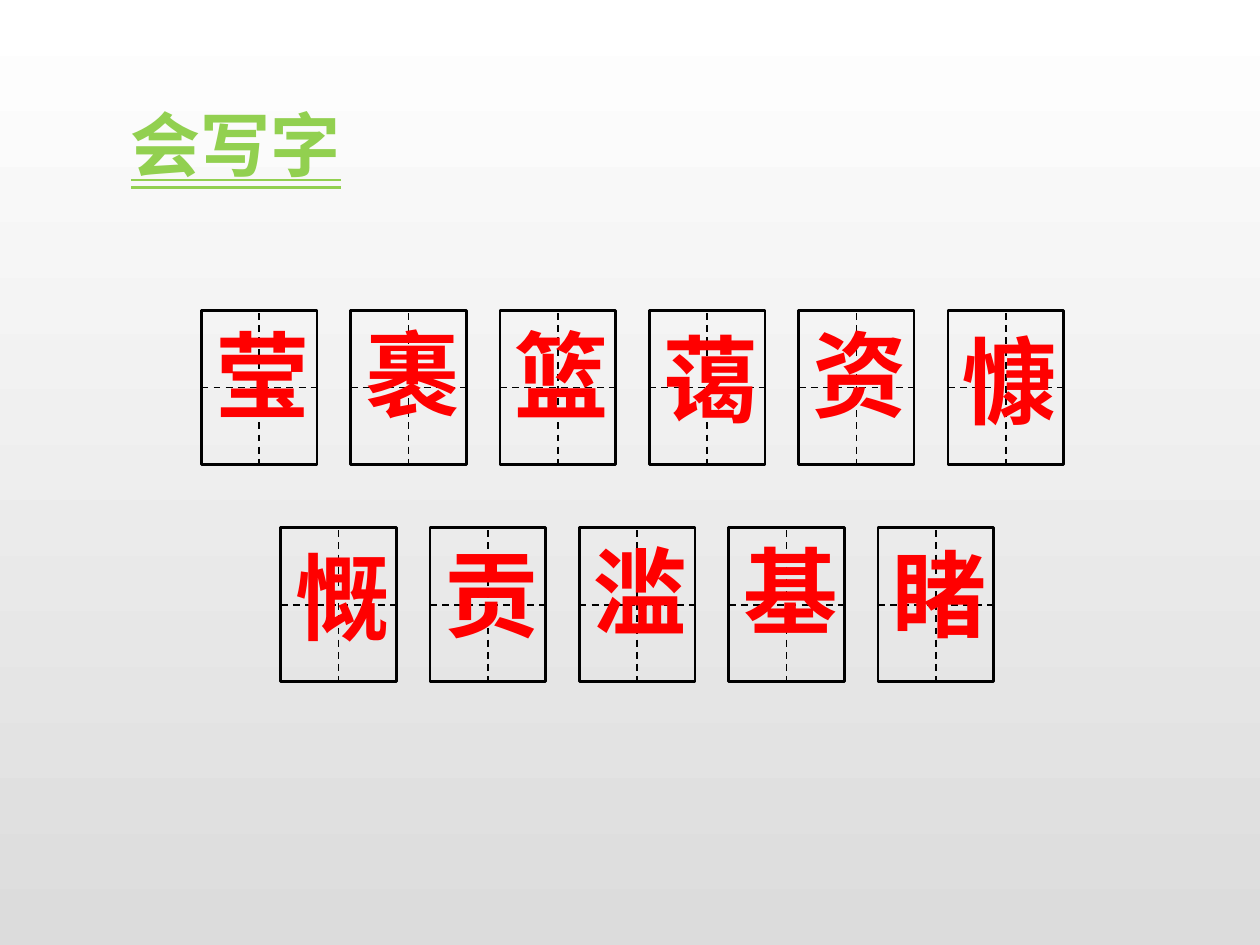
import pptx
import pptx.dml.color
import pptx.enum.dml
import pptx.enum.shapes
import pptx.enum.text
import pptx.oxml.ns
import pptx.util
from lxml import etree

Cm = pptx.util.Cm
Pt = pptx.util.Pt
RGB = pptx.dml.color.RGBColor.from_string
qn = pptx.oxml.ns.qn

COLORS = {
    "sky": "FFFFFF",
    "ground": "DCDCDC",
    "title": "92D050",
    "character": "FF0000",
    "grid": "000000",
}
FONT = "Noto Sans CJK SC"

deck = pptx.Presentation()
deck.slide_width, deck.slide_height = Cm(25.4), Cm(19.05)
slide = deck.slides.add_slide(deck.slide_layouts[6])

backdrop = slide.background.fill
backdrop.gradient()
backdrop.gradient_angle = 270
for stop, color in zip(backdrop.gradient_stops, ("sky", "ground")):
    stop.color.rgb = RGB(COLORS[color])


def add_text(text, left, top, width, height, size, color, wrap=True, underline=None):
    frame = slide.shapes.add_textbox(Cm(left), Cm(top), Cm(width), Cm(height)).text_frame
    frame.word_wrap = wrap
    frame.auto_size = pptx.enum.text.MSO_AUTO_SIZE.SHAPE_TO_FIT_TEXT
    run = frame.paragraphs[0].add_run()
    run.text = text
    run.font.size = Pt(size)
    run.font.bold = True
    run.font.underline = underline
    run.font.color.rgb = RGB(COLORS[color])
    run.font.name = FONT
    east_asian = etree.SubElement(run.font._element, qn("a:ea"))
    east_asian.set("typeface", FONT)


def add_guide(cell, x1, y1, x2, y2):
    guide = cell.shapes.add_connector(
        pptx.enum.shapes.MSO_CONNECTOR.STRAIGHT, Cm(x1), Cm(y1), Cm(x2), Cm(y2))
    guide.line.color.rgb = RGB(COLORS["grid"])
    guide.line.width = Pt(1)
    guide.line.dash_style = pptx.enum.dml.MSO_LINE.DASH
    etree.SubElement(guide._element.spPr, qn("a:effectLst"))


add_text("会写字", 2.39, 1.93, 4.8, 1.96, size=40, color="title", wrap=False,
         underline=pptx.enum.text.MSO_UNDERLINE.DOUBLE_LINE)

CELL_WIDTH, CELL_HEIGHT, PITCH = 2.33, 3.1, 3.01
practice_rows = [
    (4.06, 6.26, "莹裹篮蔼资慷", (6.27, 6.25, 6.27, 6.35, 6.25, 6.38)),
    (5.66, 10.64, "慨贡滥基睹", (10.74, 10.69, 10.62, 10.62, 10.69)),
]

for row_left, row_top, characters, character_tops in practice_rows:
    for column, (character, character_top) in enumerate(zip(characters, character_tops)):
        left = row_left + column * PITCH
        cell = slide.shapes.add_group_shape()
        border = cell.shapes.add_shape(
            pptx.enum.shapes.MSO_SHAPE.RECTANGLE,
            Cm(left), Cm(row_top), Cm(CELL_WIDTH), Cm(CELL_HEIGHT))
        border.shadow.inherit = False
        border.fill.background()
        border.line.color.rgb = RGB(COLORS["grid"])
        border.line.width = Pt(1.5)
        middle_x, middle_y = left + CELL_WIDTH / 2, row_top + CELL_HEIGHT / 2
        add_guide(cell, left, middle_y, left + CELL_WIDTH, middle_y)
        add_guide(cell, middle_x, row_top + 0.05, middle_x, row_top + CELL_HEIGHT + 0.05)
        add_text(character, left + 0.04, character_top, 2.26, 2.57, size=54, color="character")

deck.save("out.pptx")
